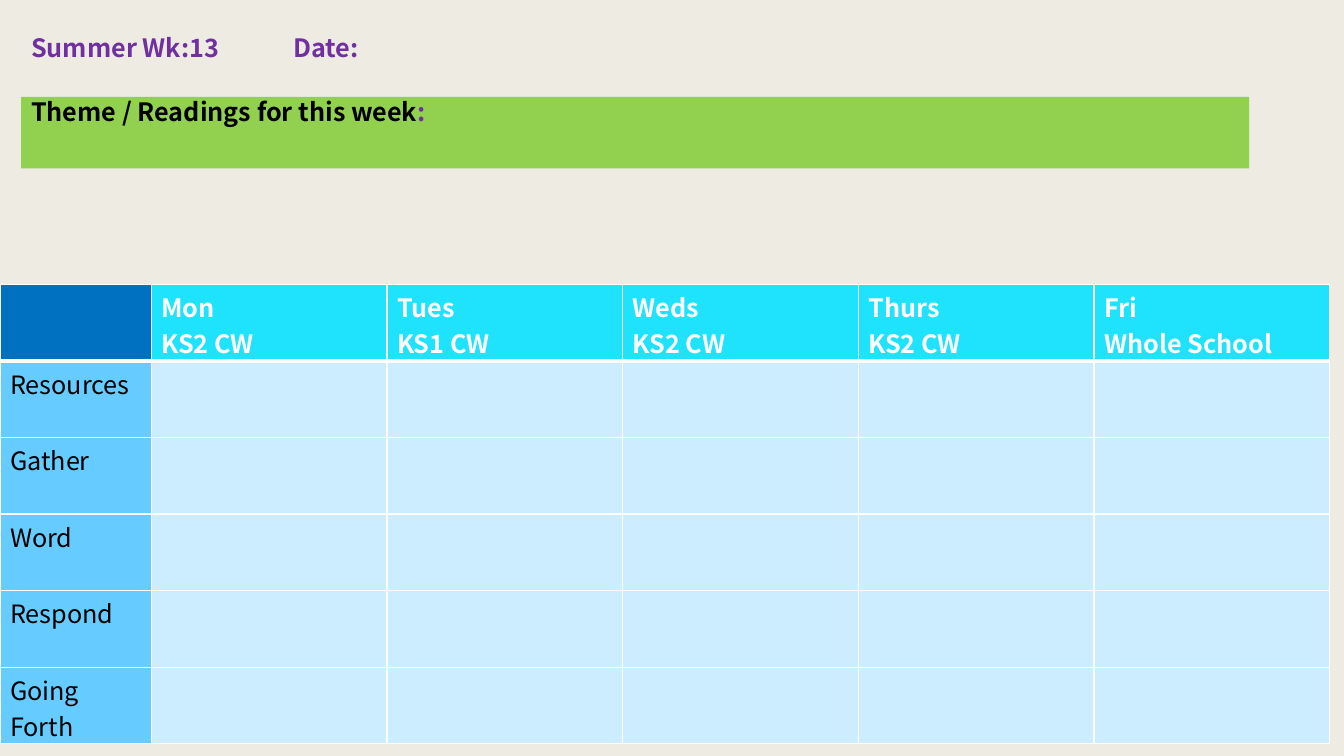
"""Weekly worship planner: a heading, a theme bar and a grid of days by stages."""
from dataclasses import dataclass

from lxml import etree
from pptx import Presentation
from pptx import util as u
from pptx.dml.color import RGBColor
from pptx.enum import shapes, text
from pptx.oxml import ns

WIDE, HIGH = u.Inches(13.33), u.Inches(7.5)
COLS, ROWS = 1333, 750


@dataclass(frozen=True)
class Theme:
    face: str = "Noto Sans CJK JP"
    size: int = 18
    thin: int = 1
    thick: int = 3
    page: str = "EEEBE2"
    purple: str = "7030A0"
    green: str = "92D050"
    black: str = "000000"
    white: str = "FFFFFF"
    corner: str = "0070C0"
    head: str = "1FE3FD"
    stage: str = "66CCFF"
    blank: str = "CCECFF"


@dataclass(frozen=True)
class Area:
    col: int
    row: int
    cols: int
    rows: int

    def box(self) -> tuple[int, int, int, int]:
        return across(self.col), down(self.row), across(self.cols), down(self.rows)


@dataclass(frozen=True)
class Day:
    name: str
    group: str


@dataclass(frozen=True)
class Look:
    fill: str
    ink: str
    bold: bool
    base: int


LOOK = Theme()
TITLE = Area(21, 32, 1298, 40)
BAR = Area(21, 96, 1218, 71)
PLAN = Area(0, 282, 1319, 456)
SIDE = 150
DAYS = [
    Day("Mon", "KS2 CW"),
    Day("Tues", "KS1 CW"),
    Day("Weds", "KS2 CW"),
    Day("Thurs", "KS2 CW"),
    Day("Fri", "Whole School"),
]
STAGES = ["Resources", "Gather", "Word", "Respond", "Going Forth"]


def across(n: float) -> int:
    return round(WIDE * n / COLS)


def down(n: float) -> int:
    return round(HIGH * n / ROWS)


def tone(code: str) -> RGBColor:
    return RGBColor.from_string(code)


def style(para, ink: str, bold: bool) -> None:
    font = para.font
    font.name, font.size, font.bold = LOOK.face, u.Pt(LOOK.size), bold
    font.color.rgb = tone(ink)


def frame(shape):
    body = shape.text_frame
    body.word_wrap = True
    body.vertical_anchor = text.MSO_ANCHOR.TOP
    body.margin_top = body.margin_bottom = 0
    return body


def title(slide) -> None:
    para = frame(slide.shapes.add_textbox(*TITLE.box())).paragraphs[0]
    para.text = "Summer Wk:13\tDate:"
    props = para._p.get_or_add_pPr()
    stops = etree.SubElement(props, ns.qn("a:tabLst"))
    etree.SubElement(stops, ns.qn("a:tab"), pos=str(across(260)), algn="l")
    style(para, LOOK.purple, True)


def bar(slide) -> None:
    shape = slide.shapes.add_shape(shapes.MSO_SHAPE.RECTANGLE, *BAR.box())
    shape.shadow.inherit = False
    shape.fill.solid()
    shape.fill.fore_color.rgb = tone(LOOK.green)
    shape.line.fill.background()
    para = frame(shape).paragraphs[0]
    para.alignment = text.PP_ALIGN.LEFT
    style(para, LOOK.black, True)
    for words, ink in (("Theme / Readings for this week", LOOK.black), (":", LOOK.purple)):
        run = para.add_run()
        run.text = words
        run.font.color.rgb = tone(ink)


def edge(cell, base: int) -> None:
    props = cell._tc.get_or_add_tcPr()
    for side in "LRTB":
        width = base if side == "B" else LOOK.thin
        line = etree.SubElement(props, ns.qn(f"a:ln{side}"), w=str(u.Pt(width)))
        fill = etree.SubElement(line, ns.qn("a:solidFill"))
        etree.SubElement(fill, ns.qn("a:srgbClr"), val=LOOK.white)


def paint(cell, words: str, look: Look) -> None:
    edge(cell, look.base)
    cell.fill.solid()
    cell.fill.fore_color.rgb = tone(look.fill)
    cell.margin_top, cell.margin_bottom = down(4), 0
    cell.text = words
    for para in cell.text_frame.paragraphs:
        style(para, look.ink, look.bold)


def plan(slide) -> None:
    tall, wide = len(STAGES) + 1, len(DAYS) + 1
    table = slide.shapes.add_table(tall, wide, *PLAN.box()).table
    for n, col in enumerate(table.columns):
        col.width = across((PLAN.cols - SIDE) / len(DAYS) if n else SIDE)
    for row in table.rows:
        row.height = down(PLAN.rows / tall)
    corner = Look(LOOK.corner, LOOK.white, True, LOOK.thick)
    head = Look(LOOK.head, LOOK.white, True, LOOK.thick)
    stage = Look(LOOK.stage, LOOK.black, False, LOOK.thin)
    blank = Look(LOOK.blank, LOOK.black, False, LOOK.thin)
    paint(table.cell(0, 0), "", corner)
    for c, day in enumerate(DAYS, 1):
        paint(table.cell(0, c), f"{day.name}\n{day.group}", head)
    for r, name in enumerate(STAGES, 1):
        paint(table.cell(r, 0), name, stage)
        for c in range(1, wide):
            paint(table.cell(r, c), "", blank)


def main() -> None:
    deck = Presentation()
    deck.slide_width, deck.slide_height = WIDE, HIGH
    slide = deck.slides.add_slide(deck.slide_layouts[6])
    slide.background.fill.solid()
    slide.background.fill.fore_color.rgb = tone(LOOK.page)
    title(slide)
    bar(slide)
    plan(slide)
    deck.save("out.pptx")


if __name__ == "__main__":
    main()
